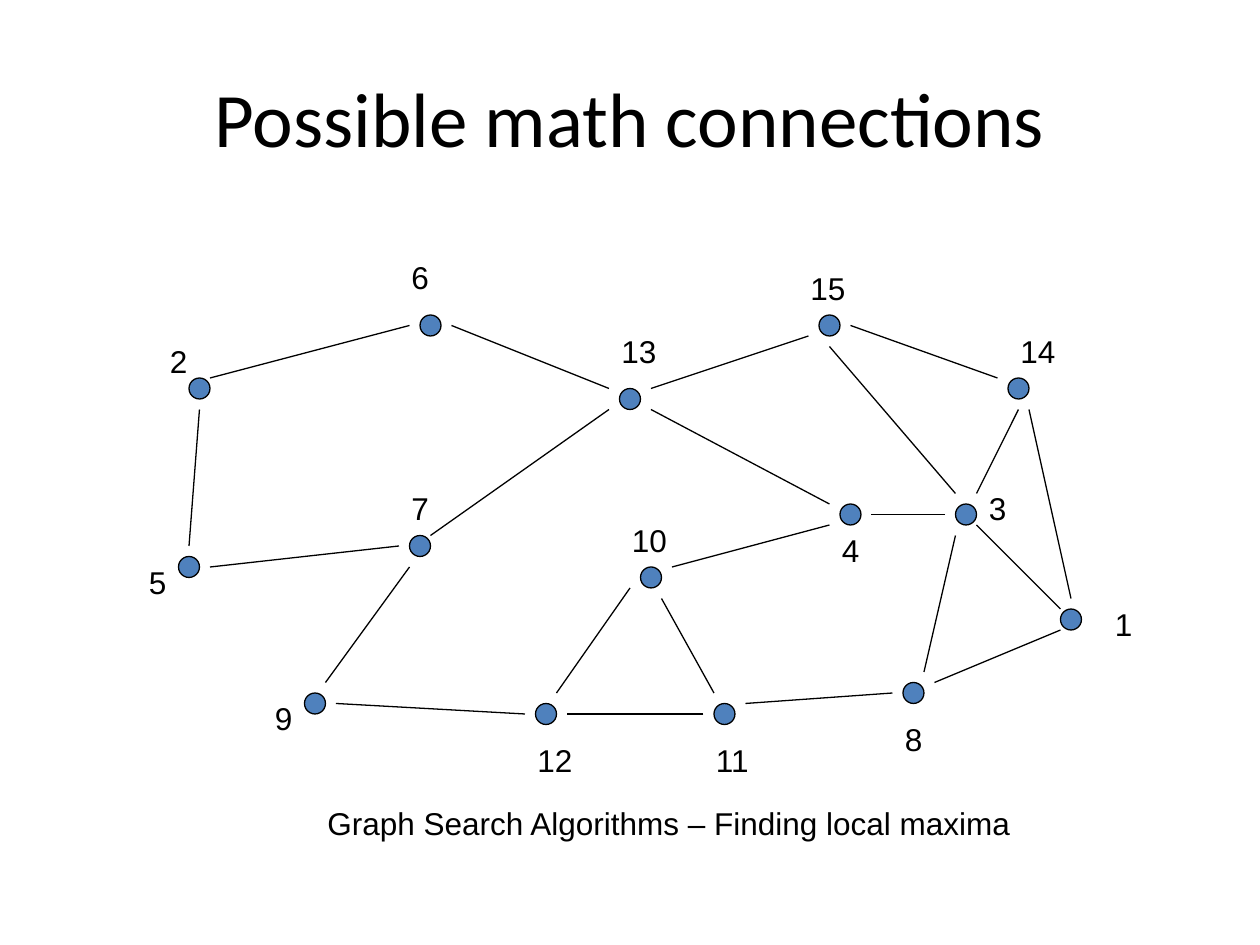
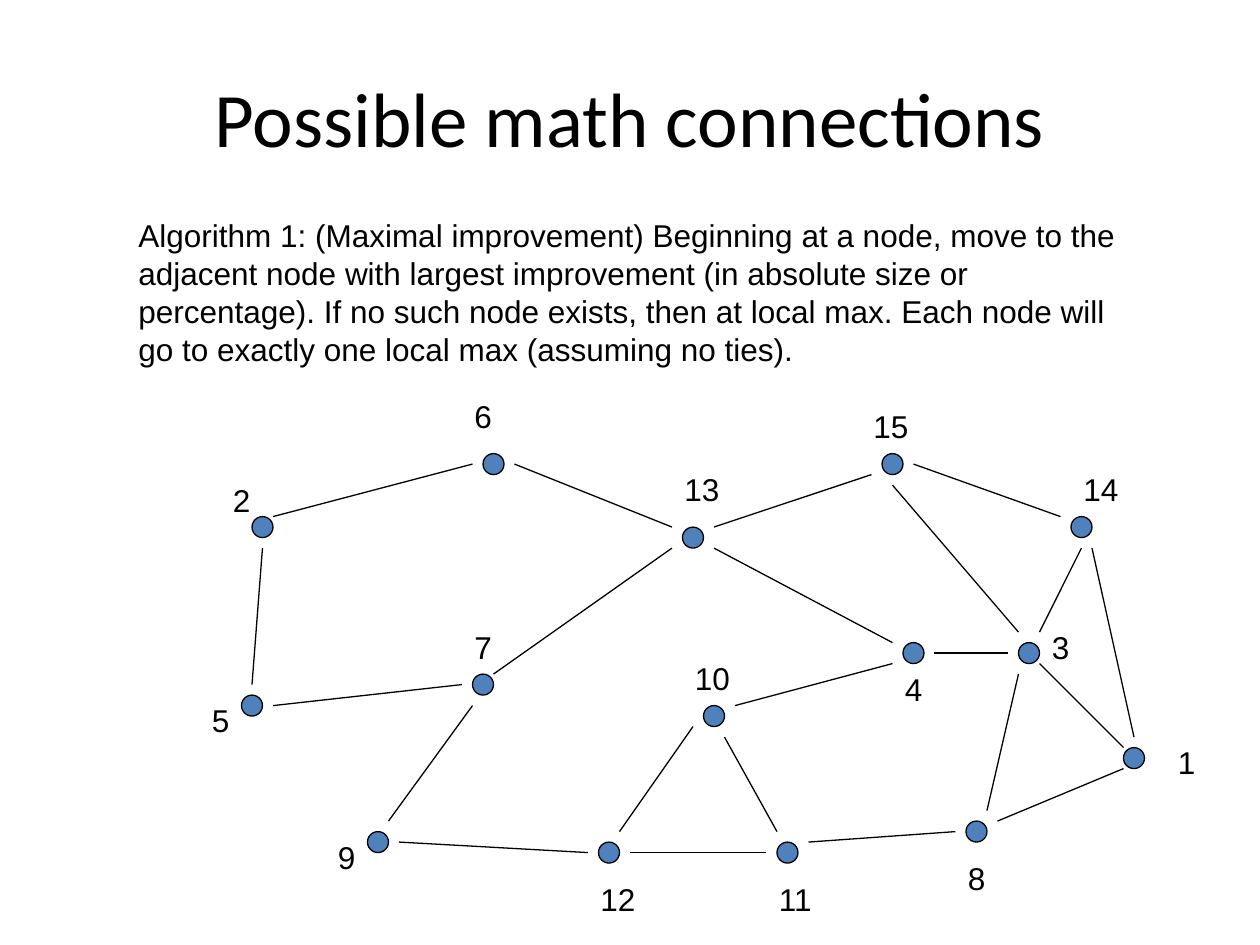
"""Build two slides that show a numbered graph and a local-maximum search."""
from lxml.etree import SubElement
from pptx import Presentation
from pptx.dml.color import RGBColor
from pptx.enum.shapes import MSO_CONNECTOR as Connector, MSO_SHAPE as Shape
from pptx.enum.text import MSO_ANCHOR as Anchor, MSO_AUTO_SIZE as AutoSize, PP_ALIGN as Align
from pptx.oxml.ns import qn
from pptx.util import Cm, Pt

COLORS = {"ink": "000000", "node": "4F81BD"}
FONTS = {
    "title": {"name": "Calibri", "size": Pt(44)},
    "body": {"name": "Arial", "size": Pt(18)},
}
FRAMES = {
    "title": {"word_wrap": True, "vertical_anchor": Anchor.MIDDLE},
    "body": {"word_wrap": True, "auto_size": AutoSize.SHAPE_TO_FIT_TEXT},
}
ALIGNMENT = {"title": Align.CENTER, "body": Align.LEFT}

GRID_CM = 2.54 / 12
NODE_SIZE = 2
LINE_HEIGHT = 4.8
LINE_WIDTH = Pt(0.75)

TITLE = "Possible math connections"
TITLE_PLACE = (6, 3.6, 108, 15)

NODES = {
    2: {"corner": (18, 36), "label": (15, 32, 6)},
    6: {"corner": (40, 30), "label": (38, 24, 6)},
    13: {"corner": (59, 37), "label": (58, 31, 6)},
    15: {"corner": (78, 30), "label": (76, 25, 8)},
    14: {"corner": (96, 36), "label": (96, 31, 6)},
    5: {"corner": (17, 53), "label": (13, 53, 5)},
    7: {"corner": (39, 51), "label": (38, 46, 5)},
    10: {"corner": (61, 54), "label": (59, 49, 6)},
    4: {"corner": (80, 48), "label": (79, 50, 4)},
    3: {"corner": (91, 48), "label": (93, 46, 5)},
    8: {"corner": (86, 65), "label": (85, 68, 9)},
    11: {"corner": (68, 67), "label": (67, 70, 7)},
    12: {"corner": (51, 67), "label": (50, 70, 6)},
    9: {"corner": (29, 66), "label": (25, 66, 5)},
    1: {"corner": (101, 58), "label": (105, 57, 4)},
}
EDGES = [
    ((20, 36), (39, 31)), ((43, 31), (58, 37)), ((62, 37), (77, 32)),
    ((81, 31), (95, 36)), ((97, 39), (93, 47)), ((91, 51), (88, 64)),
    ((79, 33), (91, 47)), ((90, 49), (83, 49)), ((85, 66), (71, 67)),
    ((67, 68), (54, 68)), ((50, 68), (32, 67)), ((31, 65), (39, 54)),
    ((38, 52), (20, 54)), ((18, 52), (19, 39)), ((41, 51), (58, 39)),
    ((62, 39), (79, 48)), ((79, 50), (64, 54)), ((60, 56), (53, 66)),
    ((63, 57), (68, 66)), ((98, 39), (102, 57)), ((101, 60), (89, 65)),
    ((93, 50), (101, 58)),
]
SLIDES = [
    {
        "shift": (0, 0),
        "grouped": False,
        "text": "Graph Search Algorithms – Finding local maxima",
        "place": (30, 76, 68, LINE_HEIGHT),
    },
    {
        "shift": (6, 13.2),
        "grouped": True,
        "text": "Algorithm 1: (Maximal improvement) Beginning at a node, move to the "
                "adjacent node with largest improvement (in absolute size or percentage). "
                "If no such node exists, then at local max. Each node will go to exactly "
                "one local max (assuming no ties).",
        "place": (12, 20, 98, 15.6),
    },
]


def color(name):
    """Return the named colour."""
    return RGBColor.from_string(COLORS[name])


def grid(*values):
    """Turn grid steps into lengths."""
    return [Cm(value * GRID_CM) for value in values]


def apply(target, values):
    """Set every given attribute on the target."""
    for name, value in values.items():
        setattr(target, name, value)


def ink_line(shape):
    """Give the shape a thin dark line."""
    shape.line.color.rgb = color("ink")
    shape.line.width = LINE_WIDTH


def add_text(shapes, text, place, style="body"):
    """Add a text box in one of the shared styles."""
    frame = shapes.add_textbox(*grid(*place)).text_frame
    apply(frame, FRAMES[style])
    para = frame.paragraphs[0]
    para.alignment = ALIGNMENT[style]
    span = para.add_run()
    span.text = text
    apply(span.font, FONTS[style])
    span.font.color.rgb = color("ink")


def add_graph(shapes, shift):
    """Draw nodes, edges and labels, moved by the shift."""
    right, down = shift
    for node in NODES.values():
        x, y = node["corner"]
        dot = shapes.add_shape(Shape.OVAL, *grid(x + right, y + down, NODE_SIZE, NODE_SIZE))
        dot.shadow.inherit = False
        dot.fill.solid()
        dot.fill.fore_color.rgb = color("node")
        ink_line(dot)
    for (x1, y1), (x2, y2) in EDGES:
        ends = grid(x1 + right, y1 + down, x2 + right, y2 + down)
        edge = shapes.add_connector(Connector.STRAIGHT, *ends)
        ink_line(edge)
        SubElement(edge.element.spPr, qn("a:effectLst"))
    for number, node in NODES.items():
        x, y, width = node["label"]
        add_text(shapes, str(number), (x + right, y + down, width, LINE_HEIGHT))


def main():
    """Build and save the deck."""
    deck = Presentation()
    deck.slide_width, deck.slide_height = Cm(25.4), Cm(19.05)
    for content in SLIDES:
        page = deck.slides.add_slide(deck.slide_layouts[6])
        add_text(page.shapes, TITLE, TITLE_PLACE, "title")
        shapes = page.shapes.add_group_shape().shapes if content["grouped"] else page.shapes
        add_graph(shapes, content["shift"])
        add_text(page.shapes, content["text"], content["place"])
    deck.save("out.pptx")


if __name__ == "__main__":
    main()
